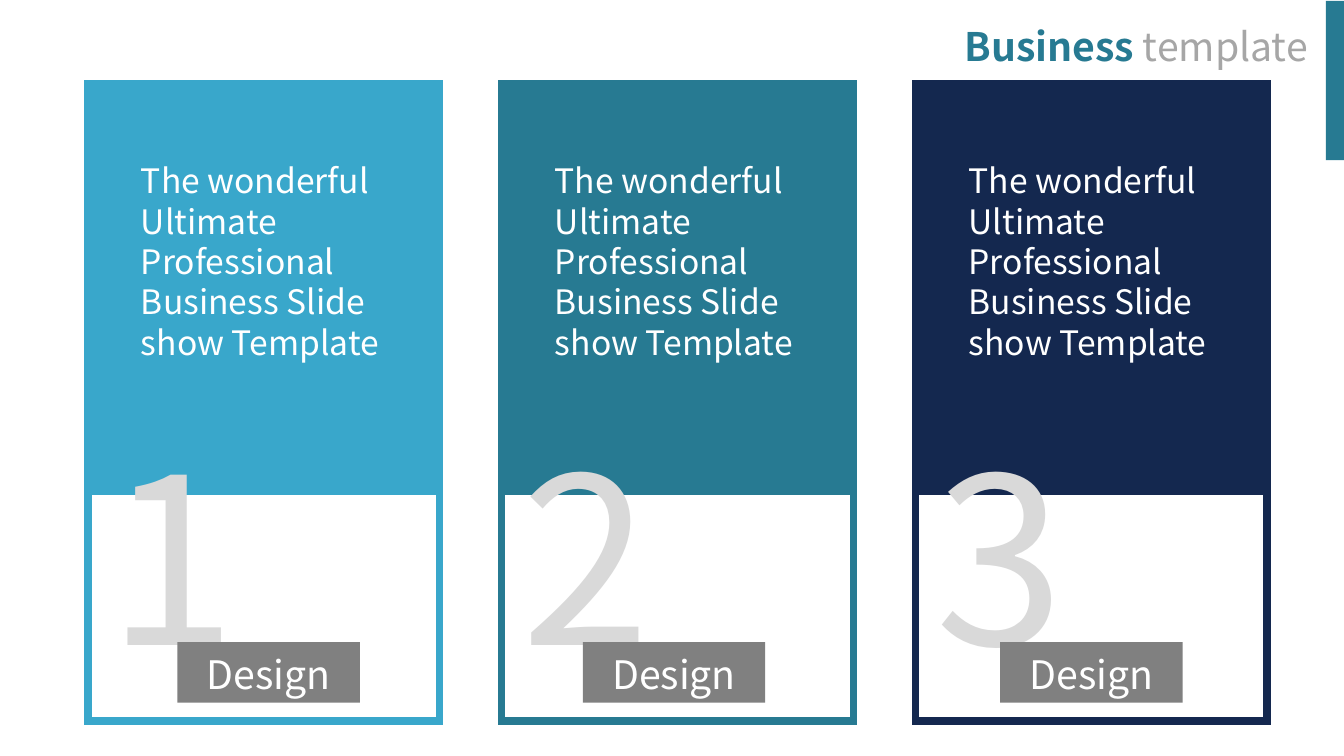
from lxml import etree
from pptx import Presentation
from pptx.dml.color import RGBColor
from pptx.enum import shapes, text
from pptx.oxml.ns import qn
from pptx.util import Inches, Pt

FONT = "Noto Sans CJK JP"
SKY = RGBColor(0x39, 0xA7, 0xCB)
TEAL = RGBColor(0x27, 0x7A, 0x92)
NAVY = RGBColor(0x14, 0x28, 0x4F)
WHITE = RGBColor(0xFF, 0xFF, 0xFF)
LIGHT_GRAY = RGBColor(0xD9, 0xD9, 0xD9)
MID_GRAY = RGBColor(0xA6, 0xA6, 0xA6)
TAG_GRAY = RGBColor(0x80, 0x80, 0x80)

MESSAGE = "The wonderful Ultimate Professional Business Slide show Template"
FIRST_LEFT, LAST_LEFT = 0.87, 9.08
# number, color, left edge of the tag
CARDS = [("1", SKY, 1.76), ("2", TEAL, 5.78), ("3", NAVY, 9.92)]
STEP = (LAST_LEFT - FIRST_LEFT) / (len(CARDS) - 1)


def write(sp, *runs, size, align=text.PP_ALIGN.LEFT, wrap=True, top=0.05):
    """Fill a shape with one paragraph; each run is (wording, color, bold)."""
    tf = sp.text_frame
    tf.word_wrap = wrap
    tf.auto_size = text.MSO_AUTO_SIZE.SHAPE_TO_FIT_TEXT
    tf.vertical_anchor = text.MSO_ANCHOR.TOP
    tf.margin_top = Inches(top)
    p = tf.paragraphs[0]
    p.alignment = align
    for wording, color, bold in runs:
        r = p.add_run()
        r.text = wording
        r.font.name = FONT
        r.font.size = Pt(size)
        r.font.bold = bold
        r.font.color.rgb = color


class Builder:
    """Draws the elements of the slide in one style."""

    def __init__(self, s):
        self.s = s

    def rect(self, x, y, w, h, fill, border=None):
        sp = self.s.shapes.add_shape(shapes.MSO_SHAPE.RECTANGLE, Inches(x),
                                     Inches(y), Inches(w), Inches(h))
        sp.shadow.inherit = False
        sp.fill.solid()
        sp.fill.fore_color.rgb = fill
        if border is None:
            sp.line.fill.background()
        else:
            sp.line.color.rgb = border
            sp.line.width = Pt(5.5)
            ln = sp.element.spPr.find(qn("a:ln"))
            etree.SubElement(ln, qn("a:miter"), lim="800000")
        return sp

    def label(self, x, y, w, h, *runs, **style):
        sp = self.s.shapes.add_textbox(Inches(x), Inches(y), Inches(w), Inches(h))
        write(sp, *runs, **style)

    def tag(self, x, wording):
        sp = self.rect(x, 6.37, 1.81, 0.6, TAG_GRAY)
        write(sp, (wording, WHITE, False), size=28,
              align=text.PP_ALIGN.CENTER, top=0.08)

    def card(self, x, number, color, tag_x):
        self.rect(x, 0.83, 3.49, 4.02, color, color)
        self.rect(x, 4.87, 3.49, 2.28, WHITE, color)
        self.label(x + 0.1, 4.05, 1.65, 2.89, (number, LIGHT_GRAY, False),
                   size=166, wrap=False)
        self.label(x + 0.43, 1.54, 2.64, 2.52, (MESSAGE, WHITE, False), size=24)
        self.tag(tag_x, "Design")

    def header(self):
        self.label(9.21, 0.17, 3.86, 0.57, ("Business ", TEAL, True),
                   ("template", MID_GRAY, False), size=28,
                   align=text.PP_ALIGN.RIGHT, wrap=False)
        self.rect(13.15, 0.01, 0.18, 1.58, TEAL)


def main():
    prs = Presentation()
    prs.slide_width, prs.slide_height = Inches(13.33), Inches(7.5)
    builder = Builder(prs.slides.add_slide(prs.slide_layouts[6]))
    for i, (number, color, tag_x) in enumerate(CARDS):
        builder.card(FIRST_LEFT + i * STEP, number, color, tag_x)
    builder.header()
    prs.save("out.pptx")


if __name__ == "__main__":
    main()
